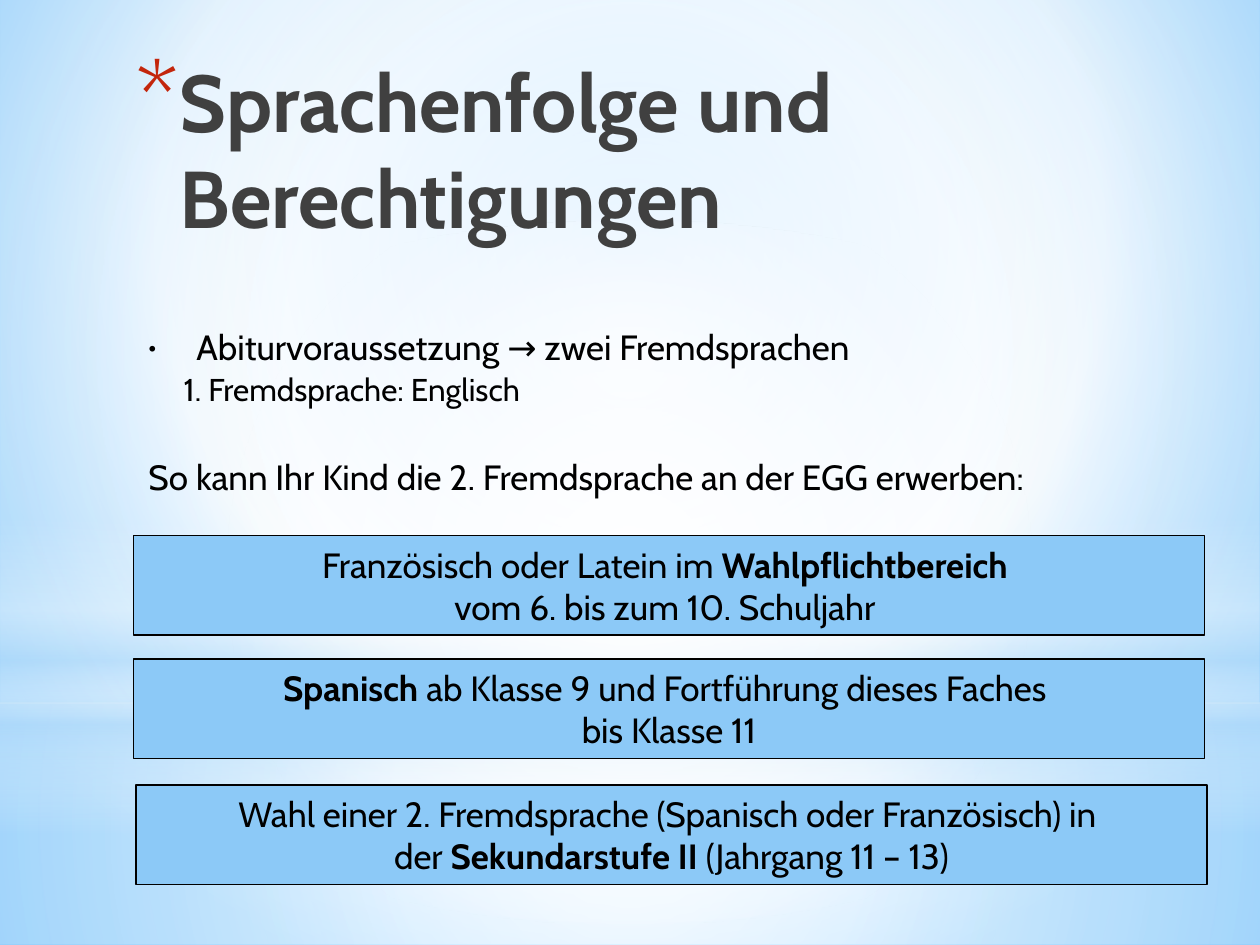
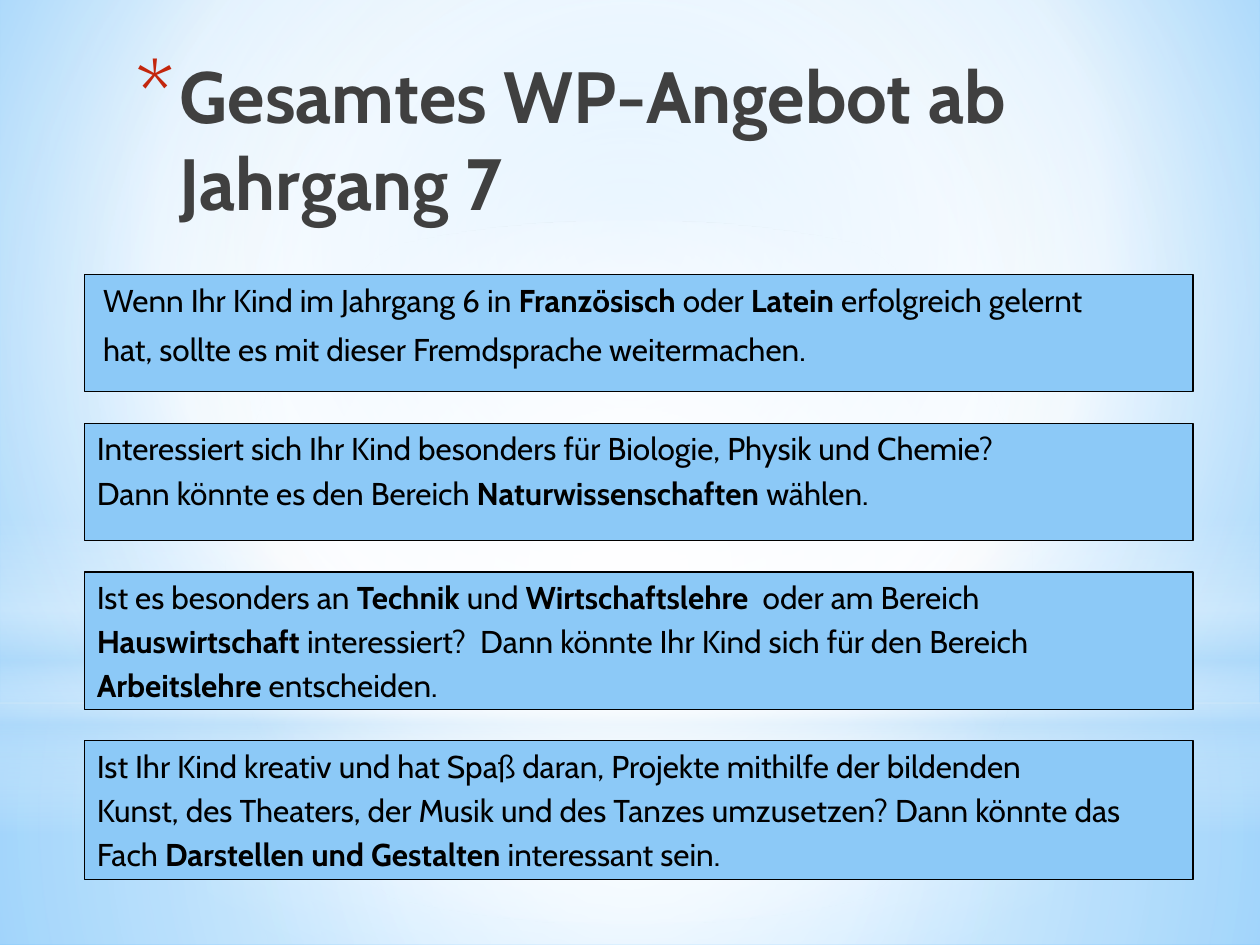
import lxml.etree
import pptx
import pptx.dml.color
import pptx.enum.shapes
import pptx.enum.text
import pptx.oxml.ns
import pptx.util

Inches = pptx.util.Inches
Pt = pptx.util.Pt
qn = pptx.oxml.ns.qn
MSO_SHAPE = pptx.enum.shapes.MSO_SHAPE
PP_ALIGN = pptx.enum.text.PP_ALIGN
MSO_ANCHOR = pptx.enum.text.MSO_ANCHOR

FONT = "Cabin"
BLACK, WHITE, TITLE_GREY, ACCENT_RED = "000000", "FFFFFF", "404040", "C3260C"
PANEL_BLUE, HAZE_BLUE = "8CC9F7", "B4DCFA"
CENTRE = (50, 50, 50, 50)

# Gradient stops are (position %, colour, opacity %).
BACKGROUND = [(0, "9ED5FF", 100), (60, WHITE, 100), (100, "5BB9FF", 100)]
BACKDROP = [
    (MSO_SHAPE.RECTANGLE, (0, 5.58, 10, 1.92), CENTRE,
     [(0, WHITE, 91), (37, WHITE, 76), (100, HAZE_BLUE, 79)]),
    (MSO_SHAPE.RECTANGLE, (0, 0, 10, 5.58), CENTRE,
     [(0, WHITE, 89), (48, WHITE, 62), (100, HAZE_BLUE, 79)]),
    (MSO_SHAPE.RECTANGLE, (0, 4.12, 10, 2.5), None,
     [(0, WHITE, 0), (29, WHITE, 30), (45, HAZE_BLUE, 40),
      (55, WHITE, 26), (65, HAZE_BLUE, 60), (100, WHITE, 0)]),
    (MSO_SHAPE.OVAL, (0, 1.75, 10, 5.58), CENTRE,
     [(0, WHITE, 100), (56, WHITE, 0)]),
]

LANGUAGE_PANELS = [
    ((1.06, 4.25, 8.5, 0.79),
     ["Französisch oder Latein im **Wahlpflichtbereich **",
      "vom 6. bis zum 10. Schuljahr "]),
    ((1.06, 5.23, 8.5, 0.79),
     ["**Spanisch **ab Klasse 9 und Fortführung dieses Faches ",
      "bis Klasse 11"]),
    ((1.08, 6.23, 8.5, 0.79),
     ["Wahl einer 2. Fremdsprache (Spanisch oder Französisch) in ",
      "der **Sekundarstufe II** (Jahrgang 11 – 13)"]),
]

# Each course is (panel height, lines, left indent, space after).
COURSES = [
    (0.93, ["Wenn Ihr Kind im Jahrgang 6 in **Französisch** oder **Latein**"
            " erfolgreich gelernt",
            "hat, sollte es mit dieser Fremdsprache weitermachen."], 0.05, 3),
    (0.93, ["Interessiert sich Ihr Kind besonders für Biologie, Physik und Chemie?",
            "Dann könnte es den Bereich **Naturwissenschaften **wählen."], 0, 0),
    (1.09, ["Ist es besonders an **Technik** und **Wirtschaftslehre**"
            "  oder am Bereich",
            "**Hauswirtschaft **interessiert?  Dann könnte Ihr Kind sich"
            " für den Bereich",
            "**Arbeitslehre** entscheiden."], 0, 0),
    (1.1, ["Ist Ihr Kind kreativ und hat Spaß daran, Projekte mithilfe der bildenden",
           "Kunst, des Theaters, der Musik und des Tanzes umzusetzen?"
           " Dann könnte das",
           "Fach **Darstellen und Gestalten** interessant sein."], 0, 0),
]


def rgb(colour):
    return pptx.dml.color.RGBColor.from_string(colour)


def inches(box):
    return [Inches(length) for length in box]


def apply_gradient(parent, stops, focus):
    """Replace the parent's solid fill; without a focus it runs downwards."""
    gradient = lxml.etree.Element(qn("a:gradFill"), rotWithShape="1")
    stop_list = lxml.etree.SubElement(gradient, qn("a:gsLst"))
    for position, colour, opacity in stops:
        stop = lxml.etree.SubElement(stop_list, qn("a:gs"), pos=str(position * 1000))
        value = lxml.etree.SubElement(stop, qn("a:srgbClr"), val=colour)
        if opacity < 100:
            lxml.etree.SubElement(value, qn("a:alpha"), val=str(opacity * 1000))
    if focus:
        radial = lxml.etree.SubElement(gradient, qn("a:path"), path="circle")
        edges = {side: str(part * 1000) for side, part in zip("ltrb", focus)}
        lxml.etree.SubElement(radial, qn("a:fillToRect"), edges)
    else:
        lxml.etree.SubElement(gradient, qn("a:lin"), ang="5400000", scaled="0")
    parent.replace(parent.find(qn("a:solidFill")), gradient)


def set_indent(paragraph, left, first=0):
    properties = paragraph._p.get_or_add_pPr()
    properties.set("marL", str(Inches(left)))
    properties.set("indent", str(Inches(first)))
    return properties


def set_bullet(paragraph, hanging, character, colour, percent):
    properties = set_indent(paragraph, hanging, -hanging)
    bullet_colour = lxml.etree.SubElement(properties, qn("a:buClr"))
    lxml.etree.SubElement(bullet_colour, qn("a:srgbClr"), val=colour)
    lxml.etree.SubElement(properties, qn("a:buSzPct"), val=str(percent * 1000))
    lxml.etree.SubElement(properties, qn("a:buFont"), typeface=FONT)
    lxml.etree.SubElement(properties, qn("a:buChar"), char=character)


def write_paragraph(frame, index, text, size, colour=BLACK, bold=False, **layout):
    """Write text in which ** switches bold on and off."""
    paragraph = frame.paragraphs[0] if index == 0 else frame.add_paragraph()
    for name, value in layout.items():
        setattr(paragraph, name, value)
    for position, part in enumerate(text.split("**")):
        if part:
            run = paragraph.add_run()
            run.text = part
            run.font.color.rgb = rgb(colour)
            style = {"name": FONT, "size": Pt(size),
                     "bold": bold or position % 2 == 1}
            for name, value in style.items():
                setattr(run.font, name, value)
    return paragraph


def add_text_frame(slide, box):
    frame = slide.shapes.add_textbox(*inches(box)).text_frame
    frame.word_wrap = True
    return frame


def add_plain_shape(slide, kind, box):
    shape = slide.shapes.add_shape(kind, *inches(box))
    shape.shadow.inherit = False
    shape.fill.solid()
    return shape


def add_backdrop(slide):
    slide.background.fill.solid()
    apply_gradient(slide.element.find(".//" + qn("p:bgPr")), BACKGROUND,
                   (20, 10, 20, 60))
    for kind, box, focus, stops in BACKDROP:
        shape = add_plain_shape(slide, kind, box)
        shape.line.fill.background()
        apply_gradient(shape.element.spPr, stops, focus)


def add_title(slide, box, text, size):
    frame = add_text_frame(slide, box)
    paragraph = write_paragraph(frame, 0, text, size, TITLE_GREY, bold=True)
    set_bullet(paragraph, 0.35, "*", ACCENT_RED, 128)


def add_panel(slide, box, anchor):
    panel = add_plain_shape(slide, MSO_SHAPE.RECTANGLE, box)
    panel.fill.fore_color.rgb = rgb(PANEL_BLUE)
    panel.line.color.rgb = rgb(BLACK)
    panel.line.width = Pt(0.75)
    frame = panel.text_frame
    frame.word_wrap = True
    frame.vertical_anchor = anchor
    return frame


def add_requirements(slide, box):
    frame = add_text_frame(slide, box)
    lines = [("Abiturvoraussetzung → zwei Fremdsprachen", 20, 0),
             ("1. Fremdsprache: Englisch", 18, 3.6),
             ("So kann Ihr Kind die 2. Fremdsprache an der EGG erwerben:", 20, 30)]
    requirement, first_language, _ = [
        write_paragraph(frame, index, text, size, line_spacing=0.9,
                        space_before=Pt(gap))
        for index, (text, size, gap) in enumerate(lines)]
    set_bullet(requirement, 0.38, "•", BLACK, 75)
    set_indent(first_language, 0.28)


def add_language_panels(slide):
    for box, lines in LANGUAGE_PANELS:
        frame = add_panel(slide, box, MSO_ANCHOR.MIDDLE)
        for index, line in enumerate(lines):
            write_paragraph(frame, index, line, 20, alignment=PP_ALIGN.CENTER)


def add_course_panels(slide, left, top, width, gap):
    for height, lines, indent, space_after in COURSES:
        frame = add_panel(slide, (left, top, width, height), MSO_ANCHOR.TOP)
        for index, line in enumerate(lines):
            paragraph = write_paragraph(
                frame, index, line, 18, alignment=PP_ALIGN.LEFT,
                space_before=Pt(3.6 if index else 0), space_after=Pt(space_after))
            set_indent(paragraph, indent)
        top += height + gap


def add_slide(presentation):
    slide = presentation.slides.add_slide(presentation.slide_layouts[6])
    add_backdrop(slide)
    return slide


def build_language_slide(presentation):
    slide = add_slide(presentation)
    add_title(slide, (0.98, 0.36, 8.27, 1.5), "Sprachenfolge und Berechtigungen", 46)
    add_requirements(slide, (1.08, 2.57, 8.11, 1.02))
    add_language_panels(slide)


def build_course_slide(presentation):
    slide = add_slide(presentation)
    add_title(slide, (0.98, 0.36, 8.43, 1.34),
              "Gesamtes WP-Angebot ab Jahrgang 7", 41.4)
    add_course_panels(slide, left=0.67, top=2.18, width=8.8, gap=0.25)


def main():
    presentation = pptx.Presentation()
    presentation.slide_width = Inches(10)
    presentation.slide_height = Inches(7.5)
    build_language_slide(presentation)
    build_course_slide(presentation)
    presentation.save("out.pptx")


if __name__ == "__main__":
    main()
